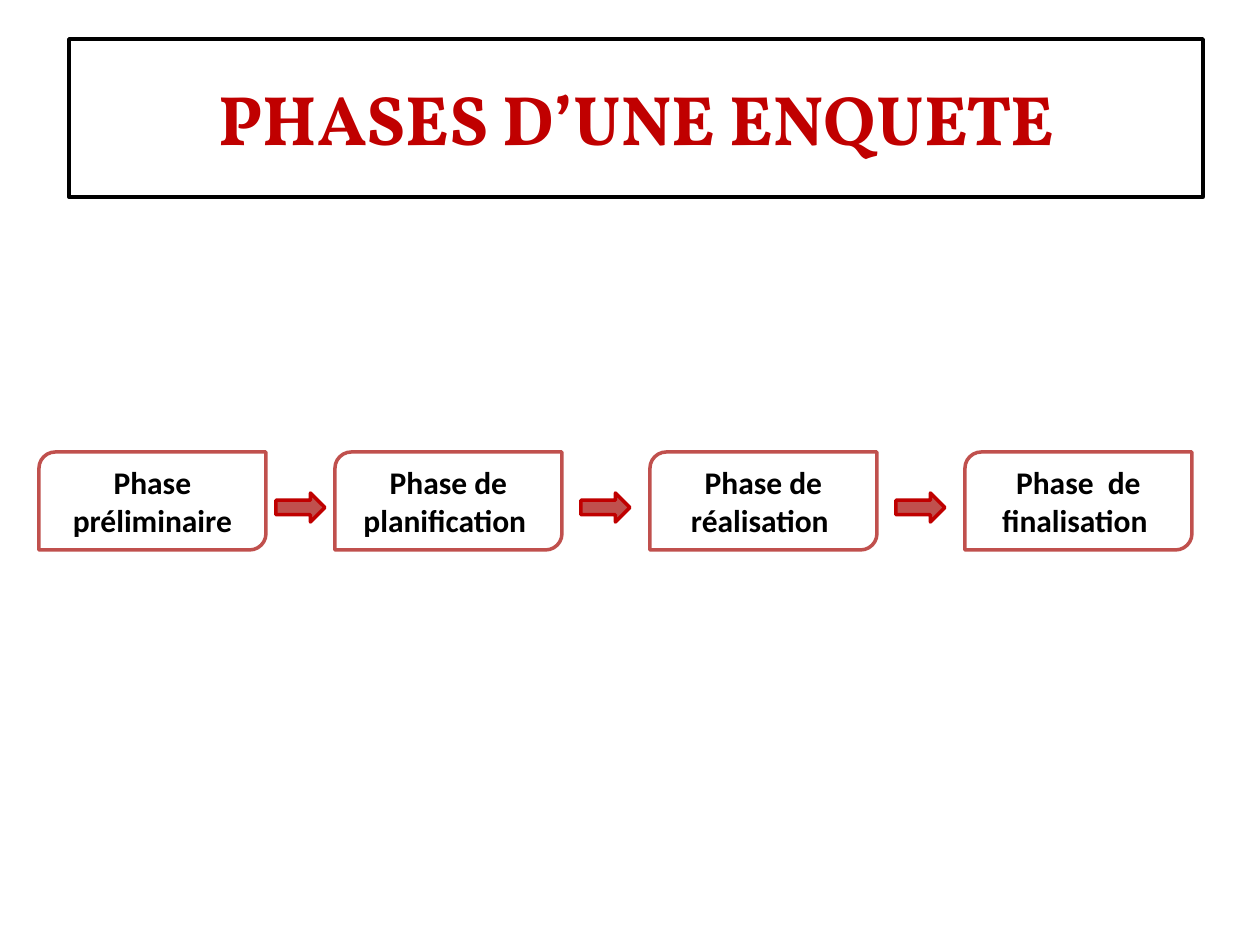
from pptx import Presentation
from pptx.dml.color import RGBColor
from pptx.enum.shapes import MSO_SHAPE
from pptx.enum.text import MSO_ANCHOR, MSO_AUTO_SIZE, PP_ALIGN
from pptx.util import Pt

CARD = MSO_SHAPE.ROUND_2_DIAG_RECTANGLE
ARROW = MSO_SHAPE.RIGHT_ARROW
TOP, MIDDLE = MSO_ANCHOR.TOP, MSO_ANCHOR.MIDDLE
CENTER = PP_ALIGN.CENTER
NO_FIT = MSO_AUTO_SIZE.NONE

PX = 914400 // 126
COLORS = {"white": "FFFFFF", "black": "000000", "red": "C00000", "brick": "C0504D"}

# Phase label and left edge of its card
PHASES = [
    ("Phase préliminaire", 39),
    ("Phase de planification ", 335),
    ("Phase de réalisation ", 650),
    ("Phase  de finalisation ", 965),
]
CARD_TOP, CARD_W, CARD_H = 452, 227, 98
ARROW_TOP, ARROW_W, ARROW_H = 493, 49, 29


def color(name):
    return RGBColor.from_string(COLORS[name])


def paint(shape, fill, line):
    shape.fill.solid()
    shape.fill.fore_color.rgb = color(fill)
    shape.line.color.rgb = color(line)
    shape.line.width = Pt(2)


def write(shape, text, font, size, tint, anchor):
    frame = shape.text_frame
    frame.text = text
    frame.word_wrap = True
    frame.auto_size = NO_FIT
    frame.vertical_anchor = anchor
    para = frame.paragraphs[0]
    para.alignment = CENTER
    style = para.runs[0].font
    style.name, style.size, style.bold = font, Pt(size), True
    style.color.rgb = color(tint)


def add_title(slide, text):
    title = slide.shapes.title
    title.left, title.top = 69 * PX, 39 * PX
    title.width, title.height = 1134 * PX, 158 * PX
    paint(title, "white", "black")
    write(title, text, "Vollkorn", 40, "red", MIDDLE)


def add_box(slide, kind, left, top, width, height, fill, line):
    box = slide.shapes.add_shape(kind, left * PX, top * PX, width * PX, height * PX)
    box.shadow.inherit = False
    paint(box, fill, line)
    return box


def add_card(slide, text, left):
    card = add_box(slide, CARD, left, CARD_TOP, CARD_W, CARD_H, "white", "brick")
    write(card, text, "Calibri", 18, "black", TOP)


def add_arrow(slide, start, end):
    # Centred in the gap between two cards
    left = (start + end - ARROW_W) // 2
    add_box(slide, ARROW, left, ARROW_TOP, ARROW_W, ARROW_H, "brick", "red")


def main():
    deck = Presentation()
    deck.slide_width, deck.slide_height = 1260 * PX, 945 * PX
    slide = deck.slides.add_slide(deck.slide_layouts[5])

    add_title(slide, "PHASES D’UNE ENQUETE")

    # Phase cards
    for text, left in PHASES:
        add_card(slide, text, left)

    # Arrows from each card to the next
    for (_, left), (_, after) in zip(PHASES, PHASES[1:]):
        add_arrow(slide, left + CARD_W, after)

    deck.save("out.pptx")


if __name__ == "__main__":
    main()
